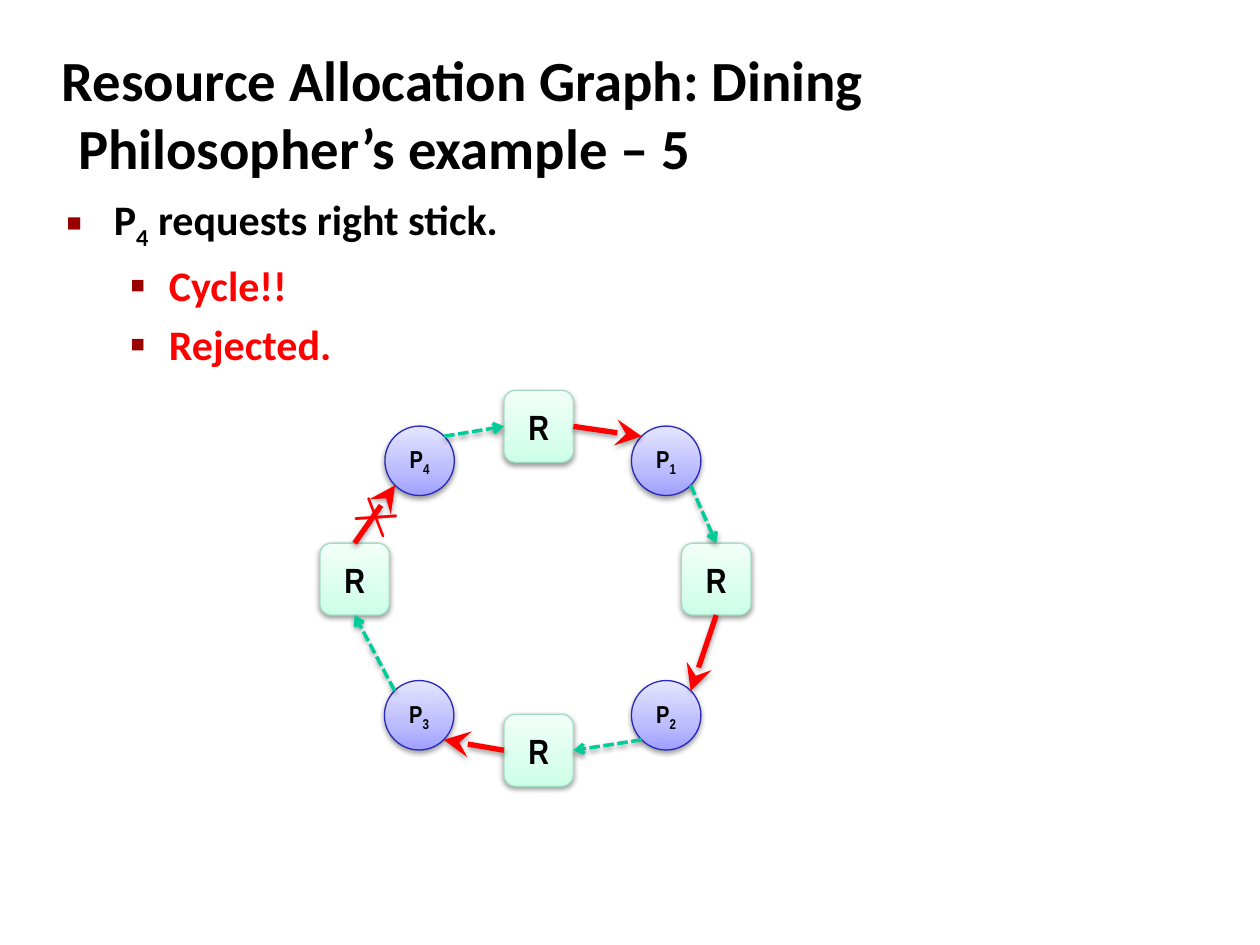
"""Build the dining philosophers resource allocation slide."""
from math import sqrt

from lxml.etree import SubElement
from pptx import Presentation
from pptx.dml.color import RGBColor
from pptx.enum.dml import MSO_LINE
from pptx.enum.shapes import MSO_CONNECTOR, MSO_SHAPE
from pptx.enum.text import MSO_ANCHOR, MSO_AUTO_SIZE, PP_ALIGN
from pptx.oxml import parse_xml
from pptx.oxml.ns import nsdecls, qn
from pptx.util import Cm, Pt

BLACK = RGBColor(0x00, 0x00, 0x00)
RED = RGBColor(0xFF, 0x00, 0x00)
GREEN = RGBColor(0x00, 0xCC, 0x99)
MAROON = RGBColor(0x99, 0x00, 0x00)
MINT_EDGE = RGBColor(0xA5, 0xDE, 0xC6)
BLUE_EDGE = RGBColor(0x29, 0x29, 0xB8)
MINT = [RGBColor(0xCC, 0xFF, 0xE8), RGBColor(0xDA, 0xFF, 0xEE), RGBColor(0xF1, 0xFF, 0xF8)]
LAVENDER = [RGBColor(0x9F, 0x9F, 0xFF), RGBColor(0xBB, 0xBB, 0xFF), RGBColor(0xE5, 0xE5, 0xFF)]
STOPS = [0, 35, 100]
TOP, LEFT, BOTTOM, RIGHT = range(4)
CIRCLE = 1.4


class SlideBuilder:
    """Hold the style and the current slide."""

    heading_font = "Calibri"
    node_font = "Arial Narrow"

    def __init__(self, deck):
        self.page = deck.slides.add_slide(deck.slide_layouts[1])

    def span(self, para, text, font, size, color=BLACK, bold=True, subscript=False):
        """Add one run of text."""
        span = para.add_run()
        span.text = text
        span.font.name = font
        span.font.size = Pt(size)
        span.font.bold = bold
        span.font.color.rgb = color
        if subscript:
            span.font._element.set("baseline", "-25000")

    def indent(self, para, margin, hanging):
        """Give a paragraph a hanging indent."""
        properties = para._p.get_or_add_pPr()
        properties.set("marL", str(Cm(margin)))
        properties.set("indent", str(-Cm(hanging)))
        return properties

    def placeholder(self, box, left, top, width, height):
        """Move a placeholder and return its text frame."""
        box.left, box.top, box.width, box.height = map(Cm, (left, top, width, height))
        box.text_frame.auto_size = MSO_AUTO_SIZE.NONE
        return box.text_frame

    def title(self, text, *place):
        """Fill the title."""
        frame = self.placeholder(self.page.shapes.title, *place)
        frame.vertical_anchor = MSO_ANCHOR.MIDDLE
        para = frame.paragraphs[0]
        para.alignment = PP_ALIGN.LEFT
        self.indent(para, 0.33, 0.33)
        self.span(para, text, self.heading_font, 32.4)

    def body(self, items, *place):
        """Fill the bulleted list."""
        frame = self.placeholder(self.page.placeholders[1], *place)
        looks = [("■", 60, 0.95, 0.95), ("▪", 110, 2.06, 0.79)]
        for number, (level, color, parts) in enumerate(items):
            para = frame.add_paragraph() if number else frame.paragraphs[0]
            para.level = level
            para.space_before = Pt(4.8)
            mark, percent, margin, hanging = looks[level]
            properties = self.indent(para, margin, hanging)
            SubElement(SubElement(properties, qn("a:buClr")), qn("a:srgbClr"), val=str(MAROON))
            SubElement(properties, qn("a:buSzPct"), val=str(percent * 1000))
            SubElement(properties, qn("a:buFont"), typeface="Arial")
            SubElement(properties, qn("a:buChar"), char=mark)
            for text, subscript in parts:
                self.span(para, text, self.heading_font, 24, color, subscript=subscript)

    def shadow(self, shape):
        """Give a shape or an arrow a soft shadow below it."""
        shape._element.spPr.append(parse_xml(
            f'<a:effectLst {nsdecls("a")}><a:outerShdw blurRad="{Pt(3.1)}" dist="{Pt(1.6)}" '
            'dir="5400000" rotWithShape="0"><a:srgbClr val="000000"><a:alpha val="38000"/>'
            '</a:srgbClr></a:outerShdw></a:effectLst>'))

    def node(self, kind, left, top, height, colors, edge, size, label, number=""):
        """Add a labelled node with a gradient fill."""
        node = self.page.shapes.add_shape(kind, Cm(left), Cm(top), Cm(CIRCLE), Cm(height))
        stops = "".join(f'<a:gs pos="{stop * 1000}"><a:srgbClr val="{color}"/></a:gs>'
                        for stop, color in zip(STOPS, colors))
        node._element.spPr.insert(2, parse_xml(
            f'<a:gradFill {nsdecls("a")} rotWithShape="1"><a:gsLst>{stops}</a:gsLst>'
            '<a:lin ang="16200000" scaled="0"/></a:gradFill>'))
        node.line.color.rgb = edge
        node.line.width = Pt(0.75)
        self.shadow(node)
        frame = node.text_frame
        frame.margin_left = frame.margin_right = 0
        frame.vertical_anchor = MSO_ANCHOR.MIDDLE
        para = frame.paragraphs[0]
        para.alignment = PP_ALIGN.CENTER
        self.span(para, label, self.node_font, size)
        if number:
            self.span(para, number, self.node_font, size, subscript=True)
        return node

    def resource(self, left, top):
        """Add a resource box."""
        return self.node(MSO_SHAPE.ROUNDED_RECTANGLE, left, top, 1.45, MINT, MINT_EDGE, 20, "R")

    def process(self, left, top, number):
        """Add a process circle."""
        return self.node(MSO_SHAPE.OVAL, left, top, CIRCLE, LAVENDER, BLUE_EDGE, 14, "P", number)

    def arrow(self, resource, side, process, across, down, held):
        """Join a resource side to a diagonal point of a process circle."""
        reach = process.width / 2 / sqrt(2)
        x = int(process.left + process.width / 2 + across * reach)
        y = int(process.top + process.height / 2 + down * reach)
        arrow = self.page.shapes.add_connector(MSO_CONNECTOR.STRAIGHT, x, y, x, y)
        if held:
            arrow.begin_connect(resource, side)
        else:
            arrow.end_connect(resource, side)
        arrow.line.color.rgb = RED if held else GREEN
        arrow.line.width = Pt(3 if held else 2)
        if not held:
            arrow.line.dash_style = MSO_LINE.SQUARE_DOT
        head = SubElement(arrow.line._get_or_add_ln(), qn("a:tailEnd"),
                          type="stealth" if held else "arrow")
        if held:
            head.set("w", "lg")
            head.set("len", "lg")
        self.shadow(arrow)

    def cross(self, left, top, width, height, angle):
        """Add the tilted rejection mark."""
        box = self.page.shapes.add_textbox(Cm(left), Cm(top), Cm(width), Cm(height))
        box.rotation = angle
        box.text_frame.word_wrap = False
        box.text_frame.auto_size = MSO_AUTO_SIZE.SHAPE_TO_FIT_TEXT
        self.span(box.text_frame.paragraphs[0], "X", "Quicksand", 28, RED, bold=False)


def main():
    """Draw the slide and save it."""
    deck = Presentation()
    deck.slide_width, deck.slide_height = Cm(25.4), Cm(19.05)
    slide = SlideBuilder(deck)
    slide.title("Resource Allocation Graph: Dining Philosopher’s example – 5", 0.99, 1.22, 21.08, 2.11)
    slide.body([
        (0, BLACK, [("P", False), ("4", True), (" requests right stick.", False)]),
        (1, RED, [("Cycle!!", False)]),
        (1, RED, [("Rejected.", False)]),
    ], 1.09, 3.78, 21.95, 13.82)

    places = [(10.16, 7.87), (13.74, 10.95), (10.16, 14.4), (6.45, 10.95)]
    north, east, south, west = [slide.resource(*place) for place in places]
    corners = [(12.73, 8.59), (12.73, 13.72), (7.75, 13.72), (7.76, 8.59)]
    first, second, third, fourth = [slide.process(*corner, str(number))
                                    for number, corner in enumerate(corners, 1)]
    for link in [
        (east, TOP, first, 1, 1, False),
        (north, RIGHT, first, -1, -1, True),
        (north, LEFT, fourth, 1, -1, False),
        (west, TOP, fourth, -1, 1, True),
        (west, BOTTOM, third, -1, -1, False),
        (south, LEFT, third, 1, 1, True),
        (south, RIGHT, second, -1, 1, False),
        (east, BOTTOM, second, 1, -1, True),
    ]:
        slide.arrow(*link)
    slide.cross(6.99, 9.68, 1.12, 1.45, 302.5)
    deck.save("out.pptx")


if __name__ == "__main__":
    main()
